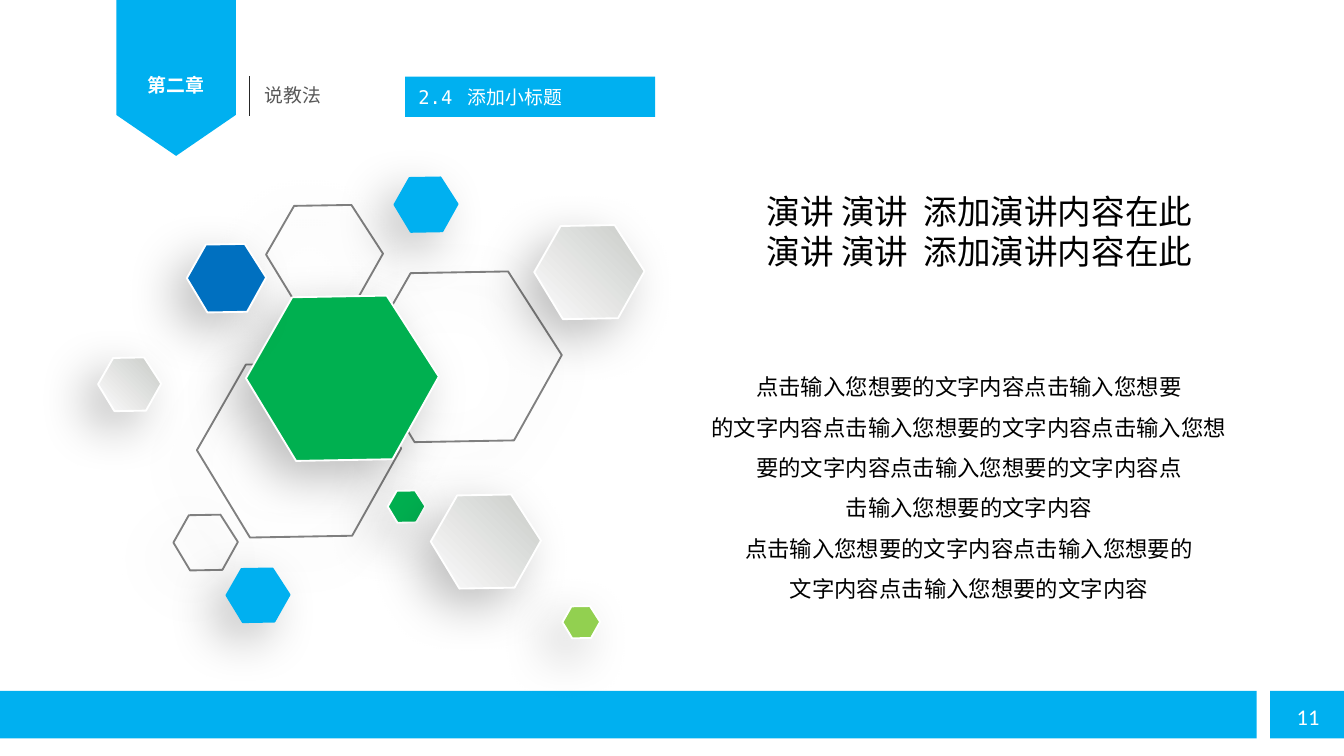
from dataclasses import dataclass
from typing import Optional, Union

from lxml.etree import SubElement
from pptx import Presentation
from pptx.dml.color import RGBColor
from pptx.enum.shapes import MSO_CONNECTOR, MSO_SHAPE
from pptx.enum.text import MSO_ANCHOR, MSO_AUTO_SIZE, PP_ALIGN
from pptx.oxml.ns import qn
from pptx.util import Inches, Pt

SKY = RGBColor(0x00, 0xB0, 0xF0)
BLUE = RGBColor(0x00, 0x70, 0xC0)
GREEN = RGBColor(0x00, 0xB0, 0x50)
LIME = RGBColor(0x92, 0xD0, 0x50)
WHITE = RGBColor(0xFF, 0xFF, 0xFF)
BLACK = RGBColor(0x00, 0x00, 0x00)
INK = RGBColor(0x26, 0x26, 0x26)
SLATE = RGBColor(0x59, 0x59, 0x59)
GREY = RGBColor(0x80, 0x80, 0x80)
SILVER = (RGBColor(0xC9, 0xCB, 0xC8), RGBColor(0xFC, 0xFC, 0xFC))
CJK, LATIN, MONO = "Noto Sans CJK SC", "Calibri", "DejaVu Sans Mono"

deck = Presentation()
deck.slide_width = Inches(10)
deck.slide_height = deck.slide_width * 9 // 16
slide = deck.slides.add_slide(deck.slide_layouts[6])
CELL = deck.slide_width / 100  # square grid, 100 columns across


@dataclass
class Box:
    left: float
    top: float
    width: float
    height: float

    def emu(self) -> list[int]:
        return [round(n * CELL) for n in (self.left, self.top, self.width, self.height)]


@dataclass
class Hexagon:
    box: Box
    fill: Union[RGBColor, tuple, None]
    edge: RGBColor = WHITE


@dataclass
class Style:
    size: float
    color: RGBColor
    name: str = CJK
    bold: bool = False


def add_run(paragraph, text: str, style: Style) -> None:
    run = paragraph.add_run()
    run.text = text
    values = {"size": Pt(style.size), "bold": style.bold, "name": style.name}
    for key, value in values.items():
        setattr(run.font, key, value)
    run.font.color.rgb = style.color
    SubElement(run.font._element, qn("a:ea")).set("typeface", CJK)


def add_text(box: Box, lines: list[str], style: Style, align=PP_ALIGN.LEFT,
             spacing: Optional[float] = None, inset: bool = True,
             wrap: bool = True, grow: bool = True) -> None:
    frame = slide.shapes.add_textbox(*box.emu()).text_frame
    layout = {"word_wrap": wrap,
              "auto_size": MSO_AUTO_SIZE.SHAPE_TO_FIT_TEXT if grow else MSO_AUTO_SIZE.NONE}
    if not inset:
        layout |= {f"margin_{side}": 0 for side in ("left", "top", "right", "bottom")}
    for key, value in layout.items():
        setattr(frame, key, value)
    for index, line in enumerate(lines):
        paragraph = frame.add_paragraph() if index else frame.paragraphs[0]
        paragraph.alignment = align
        if spacing:
            paragraph.line_spacing = spacing
        add_run(paragraph, line, style)


def add_block(box: Box, preset=MSO_SHAPE.RECTANGLE, rotation: float = 0):
    block = slide.shapes.add_shape(preset, *box.emu())
    block.rotation = rotation
    block.shadow.inherit = False
    block.fill.solid()
    block.fill.fore_color.rgb = SKY
    block.line.fill.background()
    return block


# Corners of the slightly tilted hexagon, as shares of its box
CORNERS = [(0.73, 0), (1, 0.49), (0.76, 0.99), (0.26, 1), (0, 0.5), (0.24, 0.01)]


def add_soft_shadow(shape) -> None:
    shape.shadow.inherit = False
    effects = shape._element.spPr.find(qn("a:effectLst"))
    shadow = SubElement(effects, qn("a:outerShdw"))
    values = {"blurRad": Pt(27), "dist": Pt(12), "dir": 135 * 60000,
              "algn": "tr", "rotWithShape": 0}
    for key, value in values.items():
        shadow.set(key, str(value))
    color = SubElement(shadow, qn("a:srgbClr"))
    color.set("val", str(BLACK))
    SubElement(color, qn("a:alpha")).set("val", "26000")


def add_hexagon(hexagon: Hexagon) -> None:
    left, top, width, height = hexagon.box.emu()
    points = [(round(left + x * width), round(top + y * height)) for x, y in CORNERS]
    builder = slide.shapes.build_freeform(*points[0])
    builder.add_line_segments(points[1:], close=True)
    shape = builder.convert_to_shape()
    if hexagon.fill is None:
        shape.fill.background()
    elif hexagon.fill is SILVER:
        shape.fill.gradient()
        shape.fill.gradient_angle = 225  # counter-clockwise: top right to bottom left
        for stop, color, position in zip(shape.fill.gradient_stops, SILVER, (0, 1)):
            stop.color.rgb = color
            stop.position = position
    else:
        shape.fill.solid()
        shape.fill.fore_color.rgb = hexagon.fill
    shape.line.color.rgb = hexagon.edge
    shape.line.width = Pt(1)
    add_soft_shadow(shape)


# Chapter ribbon and footer bars
add_block(Box(10.05, 4.1, 6.1, 8.9), MSO_SHAPE.PENTAGON, 90)
for bar in (Box(8.65, 0, 8.9, 5.5), Box(0, 51.4, 93.5, 3.55), Box(94.5, 51.4, 5.5, 3.55)):
    add_block(bar)
add_text(Box(95.5, 51.8, 4, 3), ["11"], Style(12, WHITE, LATIN), wrap=False)
add_text(Box(8.65, 4.65, 8.9, 2.6), ["第二章"], Style(10.1, WHITE, LATIN, True),
         PP_ALIGN.CENTER, 1.5, inset=False)

# Section name with its divider
divider = slide.shapes.add_connector(
    MSO_CONNECTOR.STRAIGHT, *[round(n * CELL) for n in (18.55, 5.65, 18.55, 8.6)])
divider.line.color.rgb = INK
divider.line.width = Pt(0.75)
SubElement(divider._element.spPr, qn("a:effectLst"))
add_text(Box(18.7, 5.7, 20.1, 2.7), ["说教法"], Style(10.1, SLATE))

# Subtitle tag
tag = add_block(Box(30.15, 5.7, 18.6, 3)).text_frame
tag.vertical_anchor = MSO_ANCHOR.MIDDLE
tag.paragraphs[0].alignment = PP_ALIGN.LEFT
add_run(tag.paragraphs[0], "2.4 ", Style(10.1, WHITE, MONO))
add_run(tag.paragraphs[0], " 添加小标题", Style(10.1, WHITE, LATIN))

# Hexagon cluster, back to front
for item in (
    Hexagon(Box(19.8, 15.25, 8.7, 7.4), None, GREY),
    Hexagon(Box(14.65, 27, 15.2, 13), None, GREY),
    Hexagon(Box(27, 20.2, 14.8, 12.7), None, GREY),
    Hexagon(Box(12.9, 38.3, 4.8, 4.15), None, GREY),
    Hexagon(Box(18.3, 22, 14.35, 12.3), GREEN),
    Hexagon(Box(13.9, 18.15, 5.9, 5.1), BLUE),
    Hexagon(Box(29.35, 13.2, 4.7, 4.05), SKY, SKY),
    Hexagon(Box(28.85, 36.5, 2.8, 2.4), GREEN),
    Hexagon(Box(32.05, 36.8, 8.2, 7), SILVER),
    Hexagon(Box(39.75, 16.75, 8.2, 7), SILVER),
    Hexagon(Box(41.85, 45.1, 2.8, 2.4), LIME),
    Hexagon(Box(16.85, 42.3, 4.7, 4), SKY, SKY),
    Hexagon(Box(7.3, 26.6, 4.7, 4), SILVER),
):
    add_hexagon(item)

# Headline and body
add_text(Box(56.05, 13.7, 38.6, 7.1), ["演讲 演讲  添加演讲内容在此"] * 2, Style(18, BLACK))
add_text(Box(52.9, 26.8, 38.4, 19.9), [
    "点击输入您想要的文字内容点击输入您想要",
    "的文字内容点击输入您想要的文字内容点击输入您想要的文字内容点击输入您想要的文字内容点",
    "击输入您想要的文字内容",
    "点击输入您想要的文字内容点击输入您想要的",
    "文字内容点击输入您想要的文字内容",
], Style(12, BLACK), PP_ALIGN.CENTER, 1.5, inset=False, grow=False)

deck.save("out.pptx")
